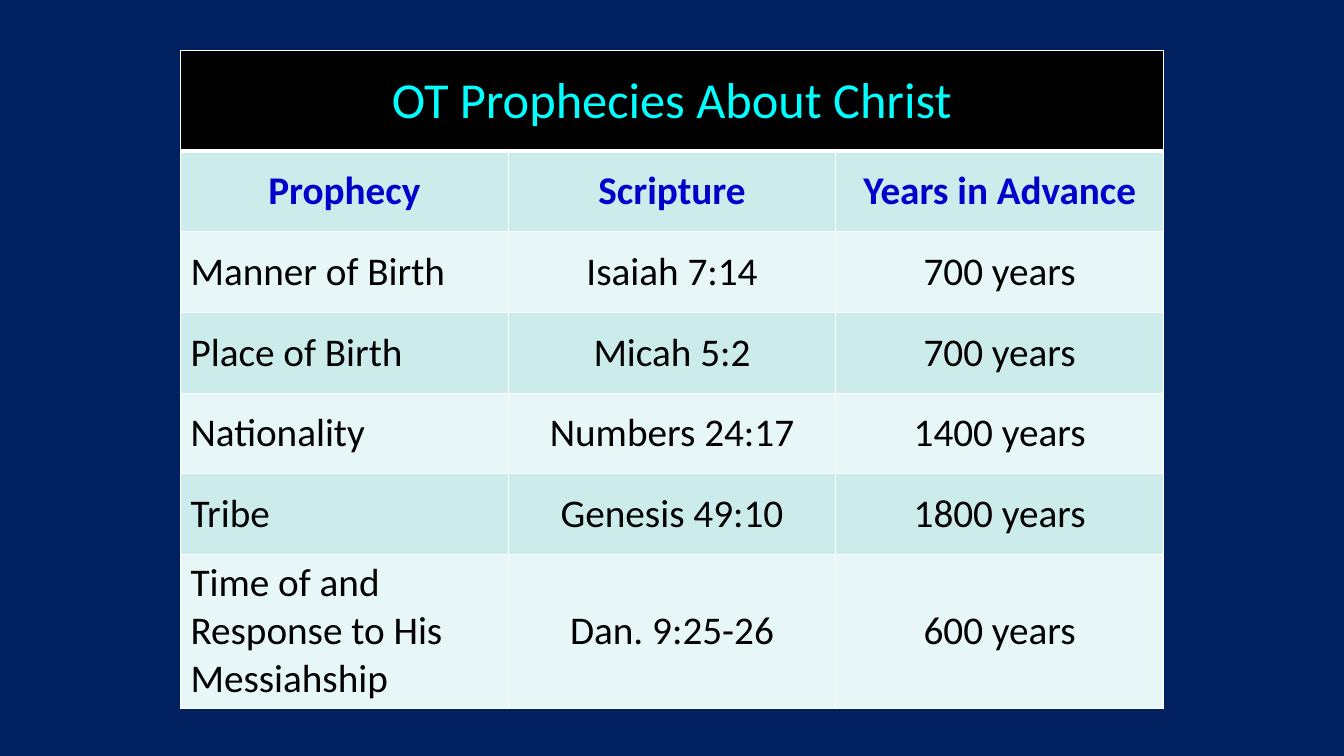
from pptx import Presentation
from pptx.util import Inches, Pt
from pptx.dml.color import RGBColor as RGB
from pptx.enum.text import PP_ALIGN as Align, MSO_ANCHOR as Anchor
from pptx.oxml import parse_xml
from pptx.oxml.ns import nsdecls

# Content
TITLE = "OT Prophecies About Christ"
HEADS = ("Prophecy", "Scripture", "Years in Advance")
ROWS = [
    ("Manner of Birth", "Isaiah 7:14", "700 years"),
    ("Place of Birth", "Micah 5:2", "700 years"),
    ("Nationality", "Numbers 24:17", "1400 years"),
    ("Tribe", "Genesis 49:10", "1800 years"),
    ("Time of and Response to His Messiahship", "Dan. 9:25-26", "600 years"),
]

# Look
FONT = "Calibri"
NAVY = RGB(0x00, 0x20, 0x60)
BLACK = RGB(0x00, 0x00, 0x00)
CYAN = RGB(0x00, 0xFF, 0xFF)
BLUE = RGB(0x00, 0x00, 0xCC)
WHITE = RGB(0xFF, 0xFF, 0xFF)
BANDS = (RGB(0xCC, 0xEC, 0xEC), RGB(0xE7, 0xF6, 0xF6))

# Grid
WIDE, HIGH = 13.33, 7.5
COL, ROW, TOP = 3.25, 0.8, 0.5
HEAD = 1.0


def edge(cell, side, width):
    """Draw one white border of a cell."""
    cell._tc.get_or_add_tcPr().append(parse_xml(
        f'<a:ln{side} {nsdecls("a")} w="{Pt(width)}"><a:solidFill>'
        f'<a:srgbClr val="{WHITE}"/></a:solidFill></a:ln{side}>'))


def style(cell, row, col):
    """Set the borders, fill and text format for a place in the grid."""
    for side in "LRTB":
        thick = (row, side) in ((0, "B"), (1, "T"))
        edge(cell, side, 3 if thick else 1)
    cell.fill.solid()
    cell.fill.fore_color.rgb = BLACK if row == 0 else BANDS[(row - 1) % 2]
    cell.vertical_anchor = Anchor.MIDDLE
    para = cell.text_frame.paragraphs[0]
    para.alignment = Align.LEFT if row > 1 and col == 0 else Align.CENTER
    for run in para.runs:
        run.font.name = FONT
        run.font.size = Pt(36 if row == 0 else 28)
        run.font.bold = row == 1
        run.font.color.rgb = (CYAN, BLUE)[row] if row < 2 else BLACK


# Slide
deck = Presentation()
deck.slide_width, deck.slide_height = Inches(WIDE), Inches(HIGH)
slide = deck.slides.add_slide(deck.slide_layouts[6])
slide.background.fill.solid()
slide.background.fill.fore_color.rgb = NAVY

# Table, centred across the slide
grid = [(TITLE, "", ""), HEADS, *ROWS]
span = COL * len(HEADS)
tall = HEAD + ROW * (len(grid) - 1)
table = slide.shapes.add_table(
    len(grid), len(HEADS), Inches((WIDE - span) / 2), Inches(TOP),
    Inches(span), Inches(tall)).table
for col in table.columns:
    col.width = Inches(COL)
for r, line in enumerate(grid):
    table.rows[r].height = Inches(ROW if r else HEAD)
    for c, text in enumerate(line):
        cell = table.cell(r, c)
        cell.text_frame.text = text
        style(cell, r, c)
table.cell(0, 0).merge(table.cell(0, len(HEADS) - 1))

deck.save("out.pptx")
